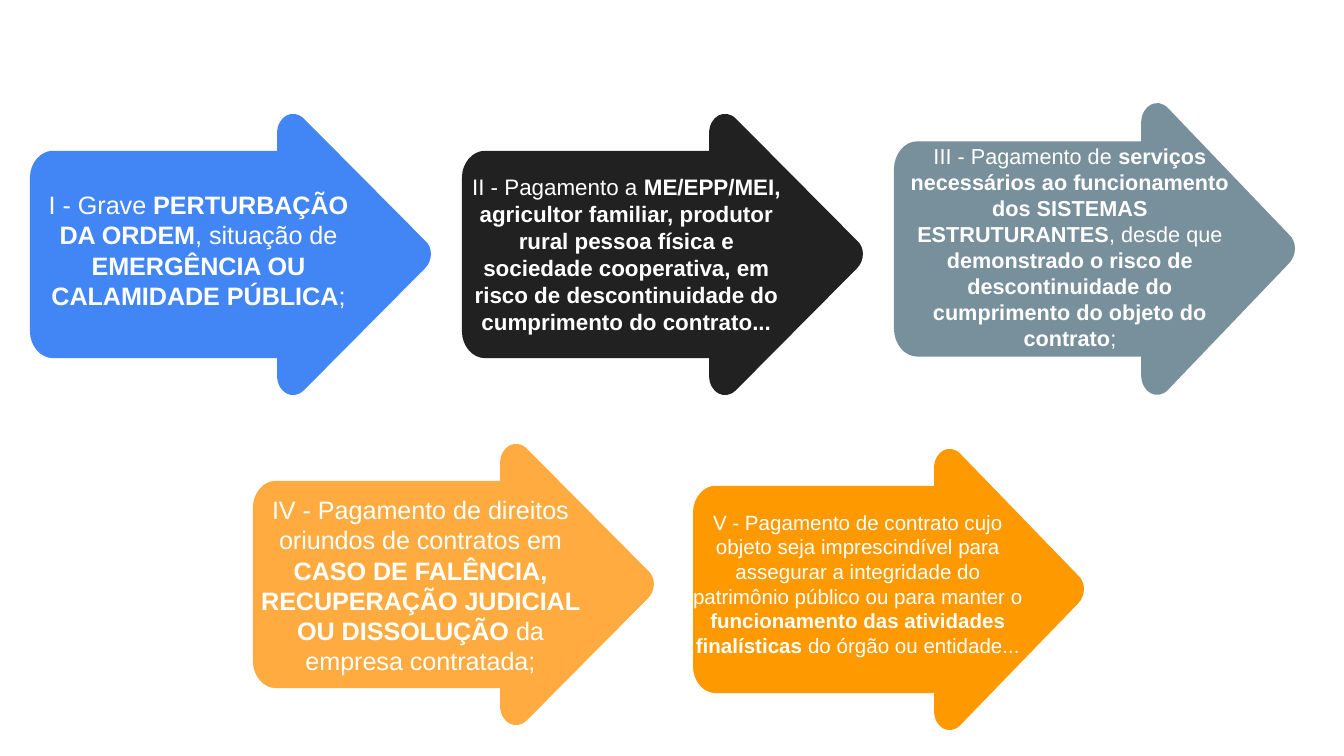
"""Slide with five arrows listing exceptions to the payment order."""
from lxml.etree import SubElement
from pptx import Presentation
from pptx.dml.color import RGBColor as Rgb
from pptx.enum.text import MSO_AUTO_SIZE as AutoSize, PP_ALIGN as Align
from pptx.oxml.ns import qn
from pptx.util import Pt

PX = 914400 / 134.4
COLORS = {"blue": "4285F4", "black": "212121", "slate": "78909C",
          "amber": "FFAB40", "orange": "FF9900", "white": "FFFFFF"}

CASES = [
    ("blue", (30, 108, 403, 293), (31, 183, 335, 136), 13.5,
     [("I - Grave", False), (" PERTURBAÇÃO DA ORDEM", True), (", situação de ", False),
      ("EMERGÊNCIA OU CALAMIDADE PÚBLICA", True), (";", False)]),
    ("black", (462, 108, 403, 293), (454, 167, 345, 176), 12,
     [("II - Pagamento a ", False),
      ("ME/EPP/MEI, agricultor familiar, produtor rural pessoa física e sociedade "
       "cooperativa, em risco de descontinuidade do cumprimento do contrato...", True)]),
    ("slate", (894, 97, 403, 304), (890, 136, 360, 224), 11.6,
     [("III - Pagamento de ", False),
      ("serviços necessários ao funcionamento dos SISTEMAS ESTRUTURANTES", True),
      (", desde que ", False),
      ("demonstrado o risco de descontinuidade do cumprimento do objeto do contrato", True),
      (";", False)]),
    ("amber", (253, 438, 403, 293), (242, 488, 357, 196), 13.5,
     [("IV - Pagamento de direitos oriundos de contratos em ", False),
      ("CASO DE FALÊNCIA, RECUPERAÇÃO JUDICIAL OU DISSOLUÇÃO ", True),
      ("da empresa contratada;", False)]),
    ("orange", (693, 443, 393, 293), (672, 503, 372, 163), 11,
     [("V - Pagamento de contrato cujo objeto seja imprescindível para assegurar a "
       "integridade do patrimônio público ou para manter o ", False),
      ("funcionamento das atividades finalísticas", True),
      (" do órgão ou entidade...", False)]),
]

ARROW_W, ARROW_H = 300, 219
TIP = (294, 99)
SEGMENTS = [
    [(204, 8)],
    [(196, 0), (184, 6), (184, 19)],
    [(184, 32)],
    [(17, 32)],
    [(8, 32), (0, 41), (0, 52)],
    [(0, 167)],
    [(0, 178), (8, 187), (17, 187)],
    [(184, 187)],
    [(184, 200)],
    [(184, 213), (196, 219), (204, 211)],
    [(294, 120)],
    [(300, 114), (300, 104), TIP],
]


def px(length):
    return round(length * PX)


def color(name):
    return Rgb.from_string(COLORS[name])


def curve_corners(arrow):
    outline = arrow._element.find(".//" + qn("a:path"))
    lines = iter(outline.findall(qn("a:lnTo")))
    for segment in SEGMENTS:
        pieces = [next(lines) for _ in segment]
        if len(pieces) == 3:
            curve = SubElement(outline, qn("a:cubicBezTo"))
            pieces[0].addprevious(curve)
            for piece in pieces:
                curve.append(piece[0])
                outline.remove(piece)


def add_arrow(slide, fill, box):
    left, top, width, height = box
    corners = [TIP] + [point for segment in SEGMENTS for point in segment]
    points = [(px(left + x * width / ARROW_W), px(top + y * height / ARROW_H))
              for x, y in corners]
    builder = slide.shapes.build_freeform(*points[0])
    builder.add_line_segments(points[1:], close=True)
    arrow = builder.convert_to_shape()
    curve_corners(arrow)
    arrow.shadow.inherit = False
    arrow.fill.solid()
    arrow.fill.fore_color.rgb = color(fill)
    arrow.line.fill.background()


def add_case_text(slide, box, size, runs):
    frame = slide.shapes.add_textbox(*map(px, box)).text_frame
    frame.word_wrap = True
    frame.auto_size = AutoSize.SHAPE_TO_FIT_TEXT
    paragraph = frame.paragraphs[0]
    paragraph.alignment = Align.CENTER
    for words, bold in runs:
        run = paragraph.add_run()
        run.text = words
        run.font.name = "Arial"
        run.font.size = Pt(size)
        run.font.bold = bold
        run.font.color.rgb = color("white")


def main():
    deck = Presentation()
    deck.slide_width, deck.slide_height = px(1344), px(756)
    slide = deck.slides.add_slide(deck.slide_layouts[6])
    for fill, arrow_box, *_ in CASES:
        add_arrow(slide, fill, arrow_box)
    for _, _, text_box, size, runs in CASES:
        add_case_text(slide, text_box, size, runs)
    deck.save("out.pptx")


if __name__ == "__main__":
    main()
